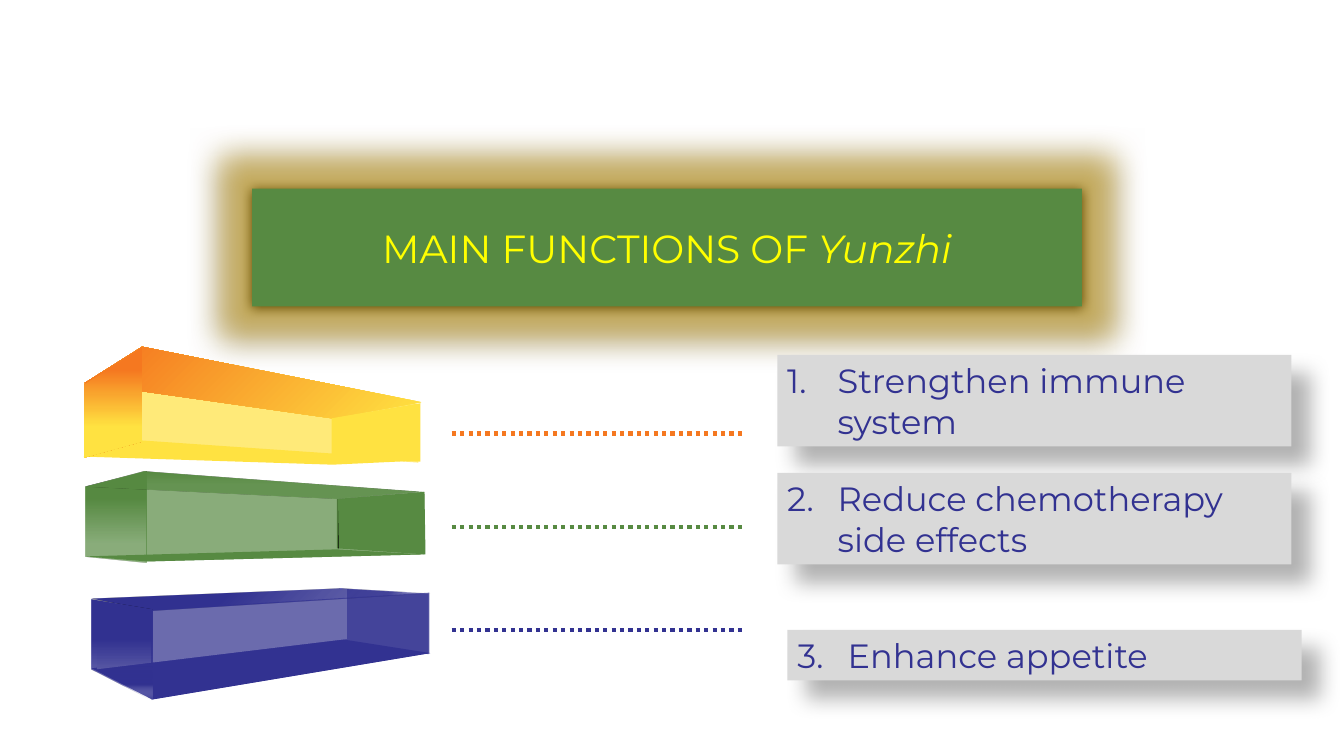
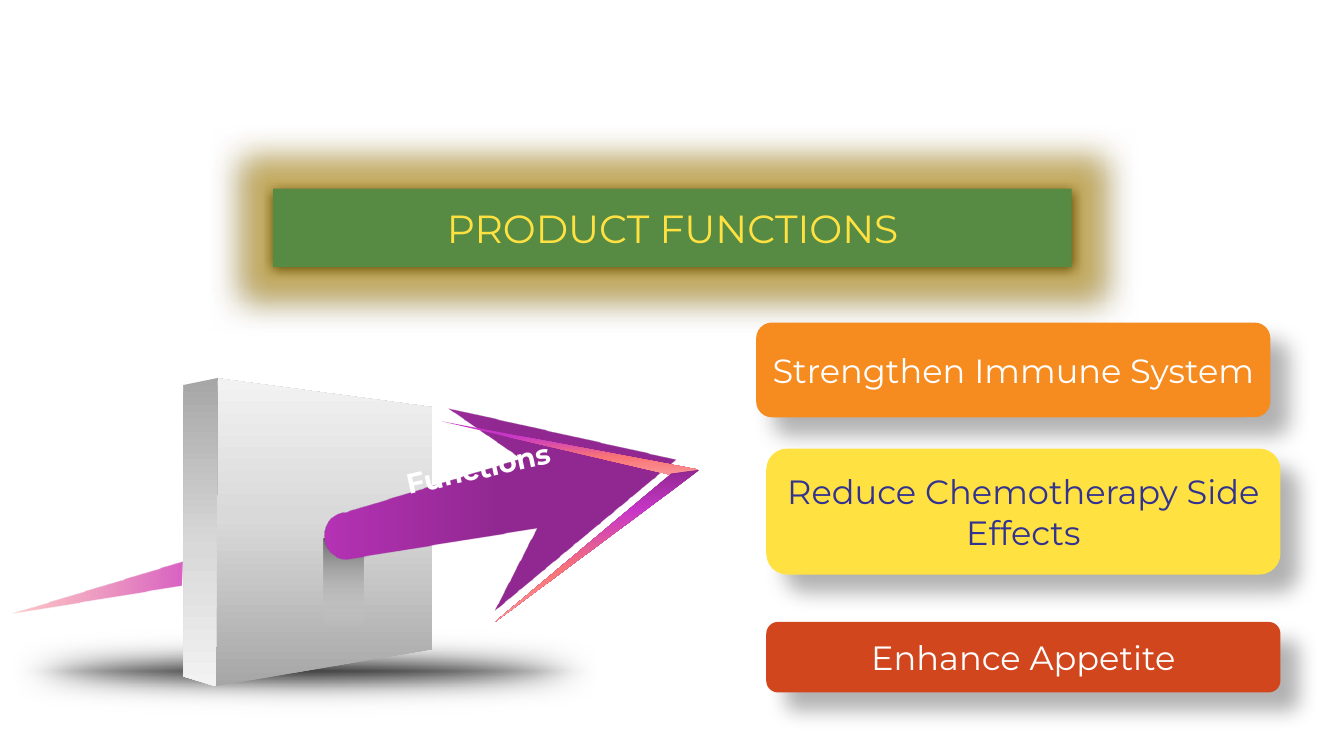
"""Build two slides on the main functions of Yunzhi."""
from dataclasses import dataclass
from math import cos, pi, sin
from typing import NamedTuple

from pptx import Presentation
from pptx.dml.color import RGBColor
from pptx.enum.dml import MSO_LINE
from pptx.enum.shapes import MSO_CONNECTOR, MSO_SHAPE
from pptx.enum.text import MSO_ANCHOR, MSO_AUTO_SIZE, PP_ALIGN
from pptx.oxml import parse_xml
from pptx.oxml.ns import nsdecls, qn
from pptx.util import Inches, Pt

FONT = "Montserrat"
HEX = {
    "navy": "323291", "green": "578A42", "yellow": "FFE241", "lemon": "FFFF00",
    "flame": "F57820", "orange": "F68B1F", "red": "D2461E", "gold": "FFC000",
    "white": "FFFFFF", "black": "000000", "coal": "121212", "jet": "020202",
    "pale": "F2F2F2", "light": "D9D9D9", "grey": "A6A6A6", "plum": "912891",
    "pink": "C737C7", "coral": "F87477", "rose": "FA9496",
}


class Stop(NamedTuple):
    at: int
    hue: str
    alpha: int = 100


@dataclass
class Fill:
    stops: list[Stop]
    angle: int = 0
    kind: str = ""
    focus: tuple = (50, 50, 50, 50)


@dataclass
class Face:
    loops: list
    fill: Fill


@dataclass
class Card:
    text: str
    left: float
    top: float
    high: float
    fill: str = "light"
    ink: str = "navy"


@dataclass
class Rule:
    top: float
    hue: str


def flat(hue: str, alpha: int = 100) -> Fill:
    return Fill([Stop(0, hue, alpha)])


def ramp(angle: int, *stops: tuple) -> Fill:
    return Fill([Stop(*stop) for stop in stops], angle)


def tint(hue: str, alpha: int) -> str:
    return f'<a:srgbClr val="{HEX[hue]}"><a:alpha val="{alpha * 1000}"/></a:srgbClr>'


def paint(shape, fill: Fill) -> None:
    shape.line.fill.background()
    shape.shadow.inherit = False
    shape.fill.solid()
    if len(fill.stops) == 1:
        tone = fill.stops[0]
        xml = f'<a:solidFill {nsdecls("a")}>{tint(tone.hue, tone.alpha)}</a:solidFill>'
    else:
        stops = "".join(f'<a:gs pos="{s.at * 1000}">{tint(s.hue, s.alpha)}</a:gs>'
                        for s in fill.stops)
        way = f'<a:lin ang="{fill.angle * 60000}" scaled="0"/>'
        if fill.kind:
            sides = " ".join(f'{side}="{value * 1000}"'
                             for side, value in zip("ltrb", fill.focus))
            way = f'<a:path path="{fill.kind}"><a:fillToRect {sides}/></a:path>'
        xml = (f'<a:gradFill {nsdecls("a")} rotWithShape="1">'
               f'<a:gsLst>{stops}</a:gsLst>{way}</a:gradFill>')
    props = shape.fill._xPr
    props.replace(props.find(qn("a:solidFill")), parse_xml(xml))


def effect(shape, xml: str) -> None:
    shape._element.spPr.find(qn("a:effectLst")).append(parse_xml(xml))


def shade(shape, alpha: int, blur: float, gap: float, angle: int) -> None:
    effect(shape, f'<a:outerShdw {nsdecls("a")} blurRad="{Pt(blur)}" dist="{Pt(gap)}" '
                  f'dir="{angle * 60000}" algn="tl" rotWithShape="0">'
                  f'{tint("black", alpha)}</a:outerShdw>')


def glow(shape, size: float, hue: str, alpha: int) -> None:
    effect(shape, f'<a:glow {nsdecls("a")} rad="{Inches(size)}">{tint(hue, alpha)}</a:glow>')


def soften(shape, size: float) -> None:
    effect(shape, f'<a:softEdge {nsdecls("a")} rad="{Inches(size)}"/>')


def write(shape, text: str, *, size: int = 24, ink: str = "white", bold: bool = False,
          italic: bool = False, align=PP_ALIGN.CENTER, anchor=MSO_ANCHOR.MIDDLE,
          number: int = 0) -> None:
    frame = shape.text_frame
    frame.word_wrap = True
    frame.auto_size = MSO_AUTO_SIZE.NONE
    frame.vertical_anchor = anchor
    para = frame.paragraphs[0]
    para.alignment = align
    if number:
        props = para._p.get_or_add_pPr()
        props.set("marL", str(Inches(0.5)))
        props.set("indent", str(Inches(-0.5)))
        props.append(parse_xml(f'<a:buFont {nsdecls("a")} typeface="+mj-lt"/>'))
        props.append(parse_xml(
            f'<a:buAutoNum {nsdecls("a")} type="arabicPeriod" startAt="{number}"/>'))
    run = para.add_run()
    run.text = text
    font = run.font
    font.name, font.size, font.bold, font.italic = FONT, Pt(size), bold, italic
    font.color.rgb = RGBColor.from_string(HEX[ink])


def place(shape, left: float, top: float, wide: float, high: float) -> None:
    shape.left, shape.top = Inches(left), Inches(top)
    shape.width, shape.height = Inches(wide), Inches(high)


def banner(slide, left: float, wide: float, high: float):
    title = slide.shapes.title
    place(title, left, 1.87, wide, high)
    paint(title, flat("green"))
    glow(title, 0.62, "gold", 40)
    shade(title, 100, 8.5, 1, 90)
    return title


def block(slide, kind, left: float, top: float, wide: float, high: float, fill: Fill):
    shape = slide.shapes.add_shape(
        kind, Inches(left), Inches(top), Inches(wide), Inches(high))
    paint(shape, fill)
    return shape


def facet(slide, face: Face) -> None:
    loops = [[(Inches(x), Inches(y)) for x, y in loop] for loop in face.loops]
    pen = slide.shapes.build_freeform(*loops[0][0], scale=1.0)
    for loop in loops:
        if loop is not loops[0]:
            pen.move_to(*loop[0])
        pen.add_line_segments(loop[1:], close=True)
    paint(pen.convert_to_shape(), face.fill)


def panel(slide, card: Card, kind, **style) -> None:
    shape = block(slide, kind, card.left, card.top, 5.1, card.high, flat(card.fill))
    shade(shape, 30, 15, 18, 45)
    write(shape, card.text, ink=card.ink, **style)


def dots(slide, rule: Rule) -> None:
    line = slide.shapes.add_connector(
        MSO_CONNECTOR.STRAIGHT, Inches(4.48), Inches(rule.top),
        Inches(7.4), Inches(rule.top))
    line.line.color.rgb = RGBColor.from_string(HEX[rule.hue])
    line.line.width = Pt(3)
    line.line.dash_style = MSO_LINE.ROUND_DOT
    line._element.spPr.append(parse_xml(f'<a:effectLst {nsdecls("a")}/>'))


def haze(angle: int) -> Fill:
    return ramp(angle, (39, "navy"), (84, "navy", 70), (100, "white", 0))


BARS = [
    Face([[(3.38, 6.34), (0.91, 6.63), (1.51, 6.94), (4.27, 6.48)]], flat("navy")),
    Face([[(4.25, 6.49), (4.25, 5.89), (3.36, 5.84), (3.36, 6.34)]], flat("navy", 70)),
    Face([[(3.44, 6.34), (3.44, 5.84), (0.96, 5.95), (0.96, 6.64)]], flat("pale")),
    Face([[(3.38, 5.84), (0.91, 5.94), (1.51, 6.06), (4.27, 5.89)]], haze(45)),
    Face([[(1.5, 6.94), (4.26, 6.48), (4.26, 5.88), (1.5, 6.05)]], flat("navy", 70)),
    Face([[(0.91, 5.95), (0.91, 6.64), (1.51, 6.95), (1.51, 6.05)]], haze(90)),
    Face([[(1.45, 4.68), (0.85, 4.83), (0.85, 5.52), (1.45, 5.58)]],
         ramp(90, (29, "green"), (78, "green", 70))),
    Face([[(4.21, 4.88), (1.45, 4.68), (1.45, 5.57), (4.21, 5.5)]], flat("green", 70)),
    Face([[(3.33, 4.95), (4.15, 4.88), (1.43, 4.68), (0.85, 4.83)]],
         ramp(90, (0, "green"), (48, "green", 70))),
    Face([[(4.21, 4.88), (3.34, 4.95), (3.34, 5.44), (4.22, 5.5)]], flat("green")),
    Face([[(3.35, 5.44), (3.36, 5.44), (3.35, 4.95)]], flat("jet")),
    Face([[(0.85, 5.52), (1.46, 5.57), (4.2, 5.5), (3.34, 5.45)]], flat("green")),
    Face([[(1.38, 3.46), (1.38, 4.39), (4.15, 4.59), (4.15, 4.01)]], flat("yellow", 70)),
    Face([[(3.29, 4.15), (4.18, 3.99), (1.41, 3.44), (0.84, 3.8)]],
         Fill([Stop(0, "yellow"), Stop(7, "flame"), Stop(100, "yellow")],
              kind="circle", focus=(0, 0, 100, 100))),
    Face([[(4.17, 4), (3.29, 4.15), (3.29, 4.51), (4.17, 4.58)]], flat("yellow")),
    Face([[(0.83, 4.53), (1.41, 4.37), (3.3, 4.5), (4.15, 4.57), (3.3, 4.61)]],
         flat("yellow")),
    Face([[(0.83, 3.82), (0.83, 4.54), (1.41, 4.38), (1.41, 3.45)]],
         ramp(90, (20, "flame"), (72, "yellow"), (100, "yellow"))),
]
RULES = [Rule(4.3, "flame"), Rule(5.23, "green"), Rule(6.25, "navy")]
LIST = [
    Card("Strengthen immune system", 7.71, 3.52, 0.91),
    Card("Reduce chemotherapy side effects", 7.71, 4.69, 0.91),
    Card("Enhance appetite", 7.81, 6.25, 0.5),
]
STEEL = [(0, "grey"), (55, "light"), (100, "pale")]
WALL = Face([[(2.13, 3.75), (4.29, 4.04), (4.29, 6.44), (2.13, 6.81)]],
            ramp(270, *STEEL))
BEND = [(3.43 - 0.22 * sin(pi * n / 16), 5.315 + 0.235 * cos(pi * n / 16))
        for n in range(17)]
ARROW = [
    Face([[(1.81, 5.57), (1.8, 5.81), (0.11, 6.09)],
          [(4.44, 4.05), (6.7, 4.56), (4.9, 6.06), (5.32, 5.24), *BEND, (5.16, 4.55)]],
         ramp(180, (0, "plum"), (27, "plum"), (66, "pink"), (100, "rose", 52))),
    Face([[(4.38, 4.18), (6.65, 4.71), (6.93, 4.66)]],
         ramp(90, (0, "pink"), (27, "pink"), (66, "coral"), (100, "rose"))),
    Face([[(6.66, 4.7), (6.94, 4.66), (4.91, 6.17)]],
         ramp(90, (0, "plum"), (27, "pink"), (66, "coral"), (100, "rose"))),
    Face([[(2.16, 3.75), (1.82, 3.82), (1.82, 6.71), (2.14, 6.81)]], ramp(90, *STEEL)),
]
CARDS = [
    Card("Strengthen Immune System", 7.5, 3.2, 0.94, "orange", "white"),
    Card("Reduce Chemotherapy Side Effects", 7.6, 4.45, 1.25, "yellow"),
    Card("Enhance Appetite", 7.6, 6.17, 0.7, "red", "white"),
]


def first(slide) -> None:
    title = banner(slide, 2.5, 8.23, 1.17)
    write(title, "MAIN FUNCTIONS OF ", size=28, ink="lemon")
    write(title, "Yunzhi", size=28, ink="lemon", italic=True)
    for face in BARS:
        facet(slide, face)
    for rule in RULES:
        dots(slide, rule)
    for number, card in enumerate(LIST, 1):
        panel(slide, card, MSO_SHAPE.RECTANGLE, align=PP_ALIGN.LEFT, number=number)


def second(slide) -> None:
    write(banner(slide, 2.71, 7.92, 0.78), "PRODUCT FUNCTIONS", size=28, ink="yellow")
    floor = block(slide, MSO_SHAPE.OVAL, -0.94, 6.13, 7.93, 1.06,
                  Fill([Stop(0, "coal"), Stop(100, "white", 0)], kind="shape"))
    soften(floor, 0.35)
    facet(slide, WALL)
    block(slide, MSO_SHAPE.RECTANGLE, 3.21, 5.34, 0.4, 1.02,
          ramp(90, (0, "black", 50), (87, "white", 0)))
    for face in ARROW:
        facet(slide, face)
    label = slide.shapes.add_textbox(Inches(3.91), Inches(4.36), Inches(2.29), Inches(0.44))
    label.rotation = 347.6
    write(label, "Functions", size=20, bold=True, align=PP_ALIGN.LEFT, anchor=MSO_ANCHOR.TOP)
    for card in CARDS:
        panel(slide, card, MSO_SHAPE.ROUNDED_RECTANGLE)


def main() -> None:
    deck = Presentation()
    deck.slide_width, deck.slide_height = Inches(13.33), Inches(7.5)
    for draw in (first, second):
        draw(deck.slides.add_slide(deck.slide_layouts[5]))
    deck.save("out.pptx")


if __name__ == "__main__":
    main()
